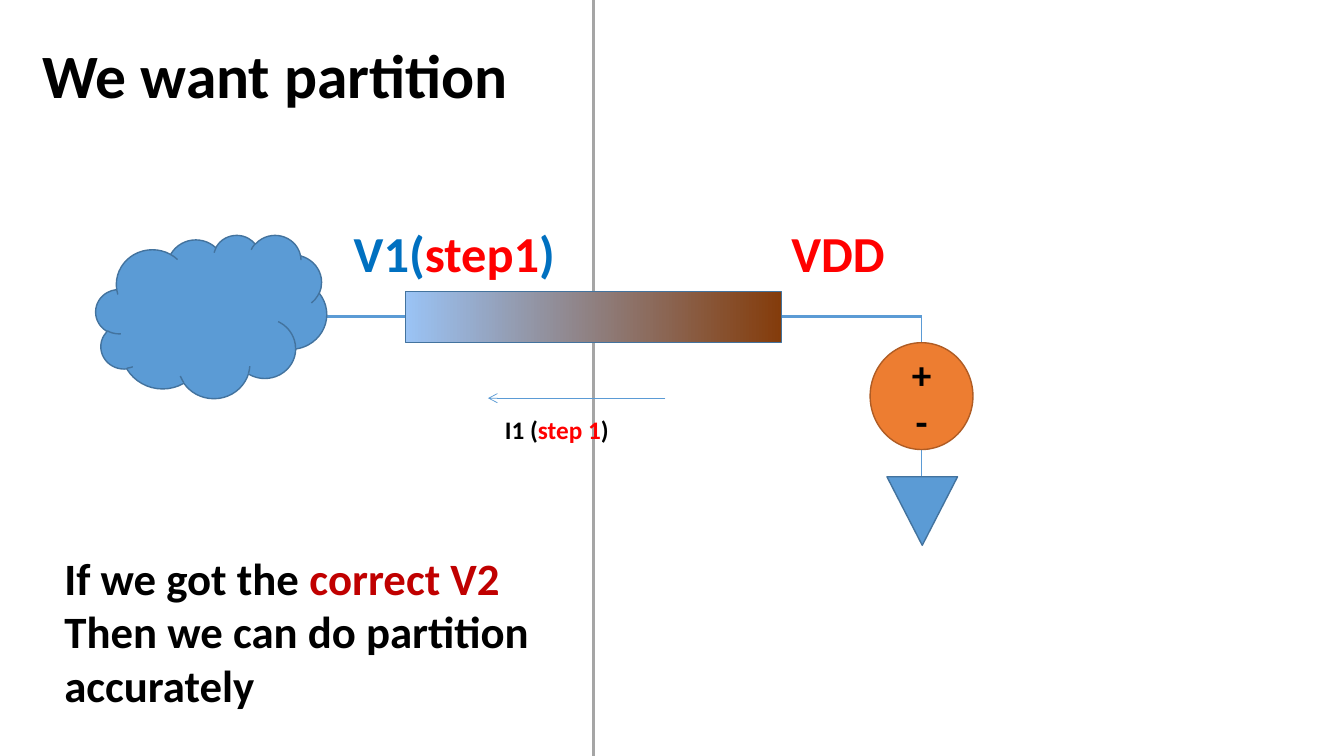
from dataclasses import dataclass

from lxml.etree import SubElement
from pptx import Presentation
from pptx.dml.color import RGBColor
from pptx.enum.shapes import MSO_CONNECTOR as Connector, MSO_SHAPE as Preset
from pptx.enum.text import MSO_AUTO_SIZE as AutoSize, PP_ALIGN as Align
from pptx.oxml.ns import qn
from pptx.util import Inches, Pt

ROWS = 45
CELL = Inches(7.5) / ROWS


@dataclass(frozen=True)
class Theme:
    font: str = "Calibri"
    black: str = "000000"
    red: str = "FF0000"
    dark_red: str = "C00000"
    node_blue: str = "0070C0"
    blue: str = "5B9BD5"
    blue_edge: str = "43739E"
    orange: str = "ED7D31"
    orange_edge: str = "AF5C24"
    grey: str = "A5A5A5"
    gradient: tuple = ("9AC3F5", "843C0B")
    title_size: int = 44
    node_size: int = 36
    body_size: int = 32
    sign_size: int = 28
    current_size: int = 18
    thin: float = 0.5
    edge: float = 1
    thick: float = 2.25


THEME = Theme()


@dataclass(frozen=True)
class Box:
    left: float
    top: float
    width: float
    height: float

    def inner(self, left, top, width, height):
        return Box(self.left + left, self.top + top, width, height)

    def lengths(self):
        return [round(value * CELL) for value in (self.left, self.top, self.width, self.height)]


def rgb(color):
    return RGBColor.from_string(color)


def add_text(slide, box, size, paragraphs, align=Align.LEFT):
    text_frame = slide.shapes.add_textbox(*box.lengths()).text_frame
    text_frame.word_wrap = False
    text_frame.auto_size = AutoSize.SHAPE_TO_FIT_TEXT
    text_frame.text = "\n".join("" for _ in paragraphs)
    for paragraph, pieces in zip(text_frame.paragraphs, paragraphs):
        paragraph.alignment = align
        for text, color in pieces:
            run = paragraph.add_run()
            run.text = text
            run.font.name = THEME.font
            run.font.size = Pt(size)
            run.font.bold = True
            run.font.color.rgb = rgb(color)


def add_shape(slide, preset, box, fill, edge):
    shape = slide.shapes.add_shape(preset, *box.lengths())
    shape.shadow.inherit = False
    shape.fill.solid()
    shape.fill.fore_color.rgb = rgb(fill)
    shape.line.color.rgb = rgb(edge)
    shape.line.width = Pt(THEME.edge)
    return shape


def add_line(slide, box, color, width, arrow=False):
    left, top, across, down = box.lengths()
    line = slide.shapes.add_connector(Connector.STRAIGHT, left, top, left + across, top + down)
    line.line.color.rgb = rgb(color)
    line.line.width = Pt(width)
    properties = line._element.spPr
    if arrow:
        SubElement(properties.find(qn("a:ln")), qn("a:tailEnd"), type="arrow")
    SubElement(properties, qn("a:effectLst"))


def add_title(slide, box):
    add_text(slide, box, THEME.title_size, [[("We want partition", THEME.black)]])


def add_divider(slide, box):
    add_line(slide, box, THEME.grey, THEME.thick)


def add_resistor(slide, box):
    resistor = add_shape(slide, Preset.RECTANGLE, box, THEME.blue, THEME.blue_edge)
    resistor.fill.gradient()
    resistor.fill.gradient_angle = 0
    for stop, position, color in zip(resistor.fill.gradient_stops, (0, 1), THEME.gradient):
        stop.position = position
        stop.color.rgb = rgb(color)


def add_voltage_source(slide, box):
    add_shape(slide, Preset.OVAL, box, THEME.orange, THEME.orange_edge)
    signs = [[(sign, THEME.black)] for sign in "+-"]
    add_text(slide, box.inner(box.width / 2 - 1.2, 0.18, 2.4, 6.24),
             THEME.sign_size, signs, Align.CENTER)


def add_circuit(slide, box):
    wire_top, ground_top = 5.94, 15.48
    source = box.inner(46.08, 7.5, 6.12, 6.36)
    supply = source.left + source.width / 2 - box.left
    add_line(slide, box.inner(supply, wire_top, 0, ground_top - wire_top), THEME.blue, THEME.thin)
    add_line(slide, box.inner(9.06, wire_top, supply - 9.06, 0), THEME.blue, THEME.thick)
    add_resistor(slide, box.inner(18.42, 4.44, 22.38, 3.06))
    add_shape(slide, Preset.CLOUD, box.inner(0, 1.08, 13.74, 9.72), THEME.blue, THEME.blue_edge)
    add_text(slide, box.inner(14.76, 0, 13.32, 4.26), THEME.node_size,
             [[("V1(", THEME.node_blue), ("step1", THEME.red), (")", THEME.node_blue)]])
    add_text(slide, box.inner(40.8, 0, 6.84, 4.26), THEME.node_size, [[("VDD", THEME.red)]])
    add_voltage_source(slide, source)
    ground = add_shape(slide, Preset.ISOSCELES_TRIANGLE,
                       box.inner(supply - 2.06, ground_top, 4.2, 4.08),
                       THEME.blue, THEME.blue_edge)
    ground.rotation = 180


def add_current(slide, box):
    add_line(slide, box.inner(box.width, 0, -box.width, 0), THEME.blue, THEME.thin, arrow=True)
    add_text(slide, box.inner(0.42, 0.66, 7.44, 2.4), THEME.current_size,
             [[("I1 (", THEME.black), ("step 1", THEME.red), (")", THEME.black)]])


def add_conclusion(slide, box):
    add_text(slide, box, THEME.body_size, [
        [("If we got the ", THEME.black), ("correct V2", THEME.dark_red)],
        [("Then we can do partition", THEME.black)],
        [("accurately", THEME.black)],
    ])


def main():
    presentation = Presentation()
    presentation.slide_width = Inches(13.33)
    presentation.slide_height = Inches(7.5)
    slide = presentation.slides.add_slide(presentation.slide_layouts[6])
    add_divider(slide, Box(35.34, 0, 0, ROWS))
    add_title(slide, Box(1.92, 1.92, 30.06, 5.04))
    add_circuit(slide, Box(5.7, 12.9, 52.2, 19.56))
    add_current(slide, Box(29.04, 23.7, 10.56, 3.06))
    add_conclusion(slide, Box(3.24, 32.46, 29.16, 10.32))
    presentation.save("out.pptx")


if __name__ == "__main__":
    main()
